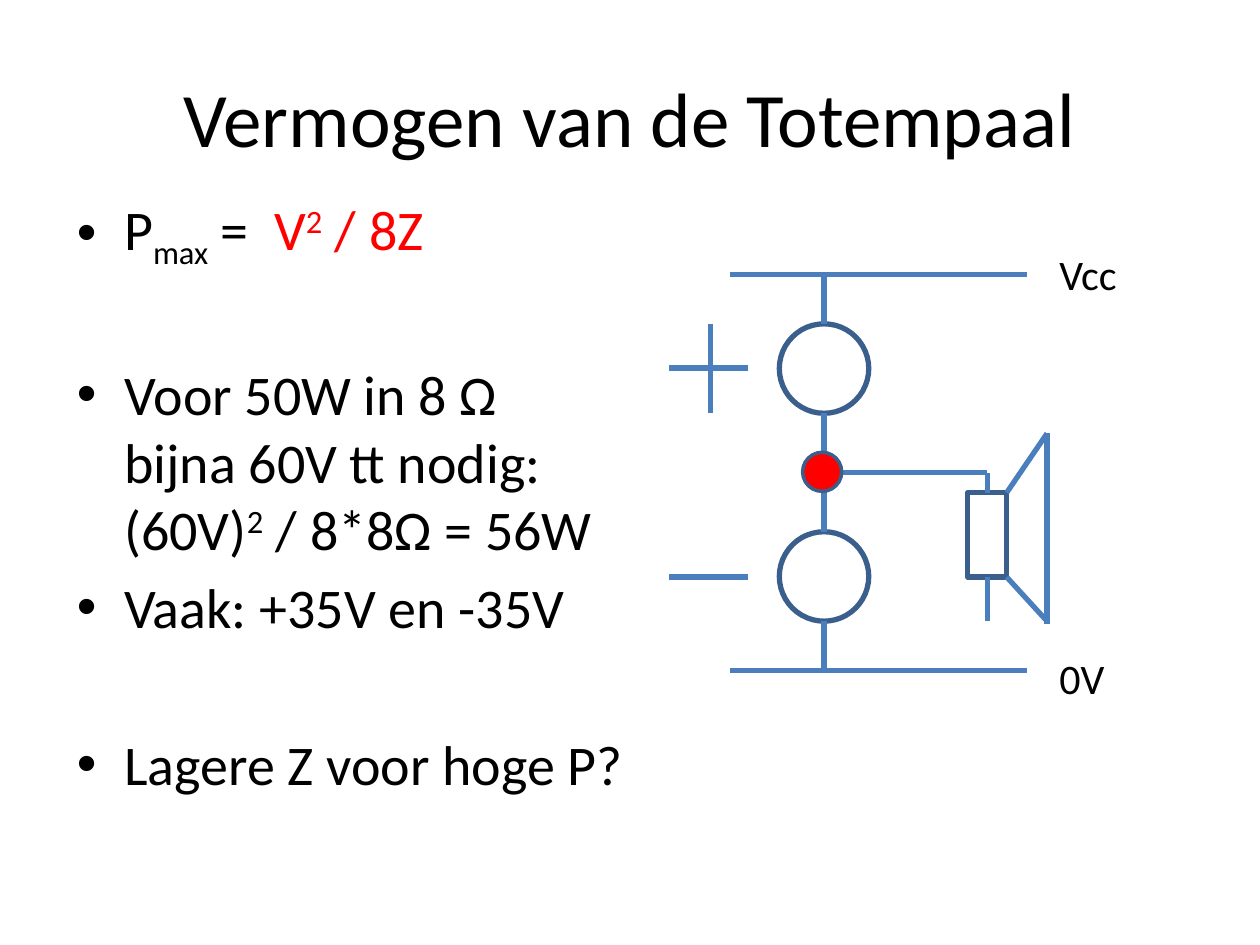
from dataclasses import dataclass
from typing import NamedTuple, Optional

import lxml.etree
import pptx
import pptx.dml.color
import pptx.enum.shapes
import pptx.enum.text
import pptx.oxml.ns
import pptx.util
from pptx.util import Inches

RGBColor = pptx.dml.color.RGBColor
ShapeKind = pptx.enum.shapes.MSO_SHAPE


@dataclass(frozen=True)
class Theme:
    font: str = "Calibri"
    text: RGBColor = RGBColor(0, 0, 0)
    accent: RGBColor = RGBColor(0xFF, 0, 0)
    wire: RGBColor = RGBColor(0x4B, 0x7E, 0xBC)
    outline: RGBColor = RGBColor(0x3A, 0x5F, 0x8C)
    title_size: int = 44
    body_size: int = 32
    label_size: int = 24
    line_width: int = 3
    dot_line_width: int = 2
    section_gap: int = 51


class Box(NamedTuple):
    left: float
    top: float
    width: float
    height: float

    def lengths(self) -> list:
        return [Inches(value) for value in self]


class Wire(NamedTuple):
    x1: float
    y1: float
    x2: float
    y2: float


class Piece(NamedTuple):
    text: str
    baseline: int = 0
    accent: bool = False


class Bullet(NamedTuple):
    pieces: list
    starts_section: bool = False


THEME = Theme()

TITLE_BOX = Box(0.5, 0.3, 9, 1.25)
BODY_BOX = Box(0.51, 1.49, 4.71, 5.8)
BULLETS = [
    Bullet([Piece("P"), Piece("max", -25000), Piece(" = "), Piece(" V", accent=True),
            Piece("2", 30000, True), Piece(" / 8Z", accent=True)]),
    Bullet([Piece("Voor 50W in 8 Ω \vbijna 60V tt nodig:\v(60V)"),
            Piece("2", 30000), Piece(" / 8*8Ω = 56W")], True),
    Bullet([Piece("Vaak: +35V en -35V")]),
    Bullet([Piece("Lagere Z voor hoge P?")], True),
]

AXIS = 6.54
SUPPLY, GROUND, OUTPUT = 2.18, 5.32, 3.75
DIAMETER = 0.71
UPPER, LOWER = 2.57, 4.22
DOT = 0.31
COIL = Box(7.68, 3.91, 0.31, 0.67)
COIL_X = COIL.left + COIL.width / 2
COIL_RIGHT, COIL_BOTTOM = COIL.left + COIL.width, COIL.top + COIL.height
CONE_X = 8.31
RAIL_LEFT, RAIL_RIGHT = 5.79, 8.15
SIGN_LEFT, SIGN_RIGHT, SIGN_X = 5.31, 5.94, 5.64
PLUS_Y, MINUS_Y = 2.92, 4.58

WIRES = [
    *[Wire(RAIL_LEFT, y, RAIL_RIGHT, y) for y in (SUPPLY, GROUND)],
    Wire(AXIS, SUPPLY, AXIS, UPPER),
    Wire(AXIS, UPPER + DIAMETER, AXIS, LOWER),
    Wire(AXIS, LOWER + DIAMETER, AXIS, GROUND),
    Wire(AXIS, OUTPUT, COIL_X, OUTPUT),
    Wire(COIL_RIGHT, COIL.top, CONE_X, 3.44),
    Wire(CONE_X, 3.44, CONE_X, 4.95),
    Wire(COIL_RIGHT, COIL_BOTTOM, CONE_X, 4.93),
    *[Wire(SIGN_LEFT, y, SIGN_RIGHT, y) for y in (PLUS_Y, MINUS_Y)],
    Wire(SIGN_X, UPPER, SIGN_X, UPPER + DIAMETER),
]


def style_paragraph(paragraph, size: int) -> None:
    paragraph.font.name = THEME.font
    paragraph.font.size = pptx.util.Pt(size)
    paragraph.font.color.rgb = THEME.text


def place(shape, box: Box) -> None:
    shape.left, shape.top, shape.width, shape.height = box.lengths()


def add_title(slide, text: str) -> None:
    title = slide.shapes.title
    place(title, TITLE_BOX)
    title.text_frame.text = text
    style_paragraph(title.text_frame.paragraphs[0], THEME.title_size)


def add_pieces(paragraph, pieces: list) -> None:
    for piece in pieces:
        for index, line in enumerate(piece.text.split("\v")):
            if index:
                paragraph.add_line_break()
            run = paragraph.add_run()
            run.text = line
            if piece.accent:
                run.font.color.rgb = THEME.accent
            if piece.baseline:
                run._r.get_or_add_rPr().set("baseline", str(piece.baseline))


def add_bullets(slide) -> None:
    body = slide.placeholders[1]
    place(body, BODY_BOX)
    frame = body.text_frame
    for index, bullet in enumerate(BULLETS):
        paragraph = frame.add_paragraph() if index else frame.paragraphs[0]
        style_paragraph(paragraph, THEME.body_size)
        if bullet.starts_section:
            paragraph.space_before = pptx.util.Pt(THEME.section_gap)
        add_pieces(paragraph, bullet.pieces)


def add_outline(slide, kind, box: Box, fill: Optional[RGBColor] = None,
                width: int = THEME.line_width):
    shape = slide.shapes.add_shape(kind, *box.lengths())
    shape.shadow.inherit = False
    if fill is None:
        shape.fill.background()
    else:
        shape.fill.solid()
        shape.fill.fore_color.rgb = fill
    shape.line.color.rgb = THEME.outline
    shape.line.width = pptx.util.Pt(width)
    return shape


def add_wire(slide, wire: Wire):
    connector = slide.shapes.add_connector(
        pptx.enum.shapes.MSO_CONNECTOR.STRAIGHT, *[Inches(value) for value in wire])
    connector.line.color.rgb = THEME.wire
    connector.line.width = pptx.util.Pt(THEME.line_width)
    lxml.etree.SubElement(connector._element.spPr, pptx.oxml.ns.qn("a:effectLst"))
    return connector


def add_label(slide, text: str, top: float) -> None:
    label = slide.shapes.add_textbox(*Box(CONE_X, top, 0.79, 0.5).lengths())
    label.text_frame.word_wrap = True
    label.text_frame.auto_size = pptx.enum.text.MSO_AUTO_SIZE.SHAPE_TO_FIT_TEXT
    label.text_frame.text = text
    style_paragraph(label.text_frame.paragraphs[0], THEME.label_size)


def add_circuit(slide) -> None:
    for top in (UPPER, LOWER):
        add_outline(slide, ShapeKind.OVAL, Box(AXIS - DIAMETER / 2, top, DIAMETER, DIAMETER))
    coil = add_outline(slide, ShapeKind.RECTANGLE, COIL)
    for wire in WIRES:
        add_wire(slide, wire)
    add_wire(slide, Wire(COIL_X, COIL.top, COIL_X, OUTPUT)).begin_connect(coil, 0)
    add_wire(slide, Wire(COIL_X, COIL_BOTTOM, COIL_X, 4.93)).begin_connect(coil, 2)
    add_label(slide, "0V", 5.13)
    add_label(slide, "Vcc", 1.92)
    add_outline(slide, ShapeKind.OVAL, Box(6.37, 3.59, DOT, DOT),
                THEME.accent, THEME.dot_line_width)


def main() -> None:
    presentation = pptx.Presentation()
    presentation.slide_width, presentation.slide_height = Inches(10), Inches(7.5)
    slide = presentation.slides.add_slide(presentation.slide_layouts[1])
    add_title(slide, "Vermogen van de Totempaal")
    add_bullets(slide)
    add_circuit(slide)
    presentation.save("out.pptx")


if __name__ == "__main__":
    main()
